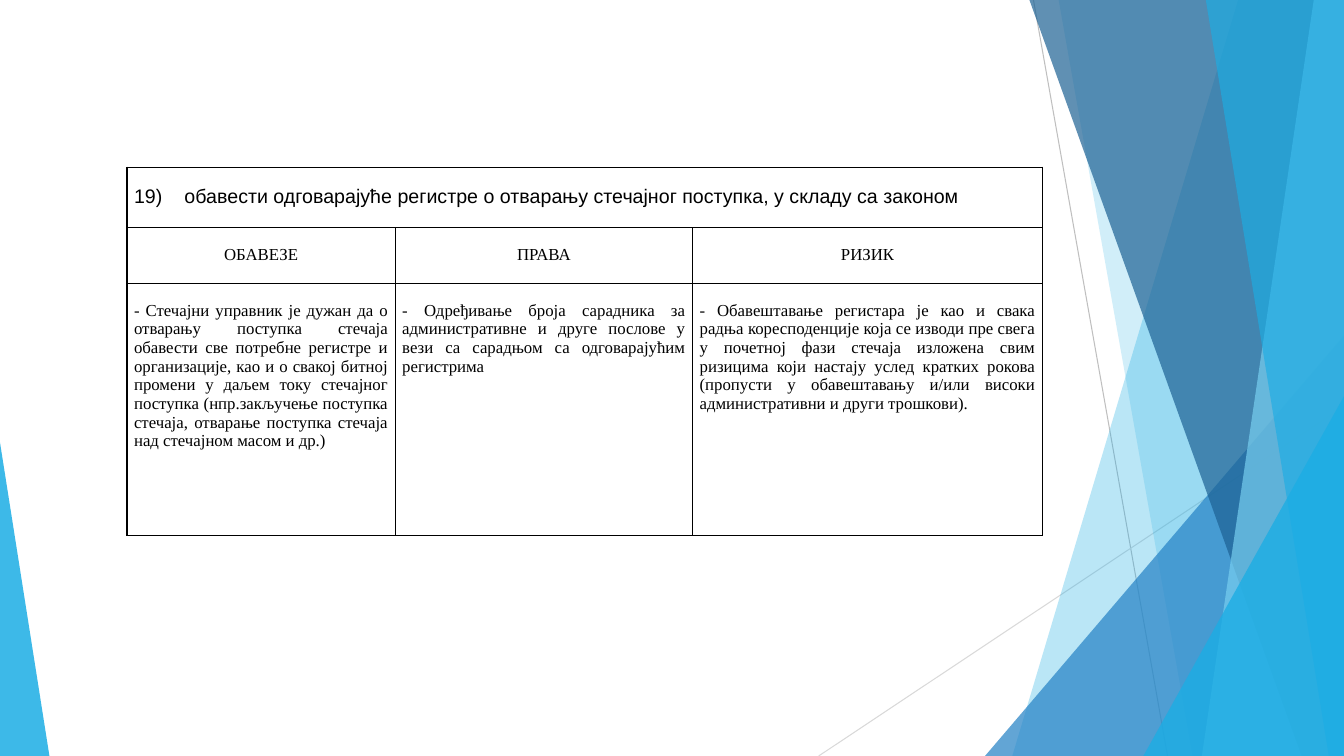
import pptx
import pptx.dml.color
import pptx.enum.shapes
import pptx.enum.text
import pptx.oxml
import pptx.oxml.ns
import pptx.util
from lxml import etree

Inches, Pt = pptx.util.Inches, pptx.util.Pt
RGB = pptx.dml.color.RGBColor.from_string
Align = pptx.enum.text.PP_ALIGN
qn = pptx.oxml.ns.qn

COLORS = {
    "sky": "1CADE4", "blue": "2683C6", "navy": "1D6294", "pale": "77CEEF",
    "gray": "BFBFBF", "light": "D9D9D9", "black": "000000",
}
WIDE, HIGH = 13.33, 7.5

deck = pptx.Presentation()
deck.slide_width, deck.slide_height = Inches(WIDE), Inches(HIGH)
slide = deck.slides.add_slide(deck.slide_layouts[6])
shapes = slide.shapes


def paint(shape, color, alpha):
    """Fill with a see-through colour; no line, no shadow."""
    shape.shadow.inherit = False
    shape.line.fill.background()
    shape.fill.solid()
    shape.fill.fore_color.rgb = RGB(COLORS[color])
    tint = shape.fill._xPr.find(".//" + qn("a:srgbClr"))
    etree.SubElement(tint, qn("a:alpha")).set("val", str(alpha * 1000))


# Thin lines
for x1, y1, x2, y2, color in [
    (10.25, 0, 11.58, HIGH, "gray"),
    (WIDE, 4.03, 8.12, HIGH, "light"),
]:
    line = shapes.add_connector(
        pptx.enum.shapes.MSO_CONNECTOR.STRAIGHT,
        Inches(x1), Inches(y1), Inches(x2), Inches(y2))
    line.line.color.rgb = RGB(COLORS[color])
    line.line.width = Pt(0.75)
    etree.SubElement(line._element.spPr, qn("a:effectLst"))

# Bands run to the right edge: top x, bottom x, colour, alpha
# Wedges stand on the bottom edge: left, top, width, tip, colour, alpha
for facet in [
    (12.28, 10.04, "sky", 30),
    (10.5, 11.83, "sky", 20),
    (9.77, 3.33, 3.56, 1, "blue", 72),
    (10.21, 12.91, "navy", 70),
    (13.03, 11.92, "pale", 70),
    (11.96, 13.18, "sky", 65),
    (11.34, 3.93, 1.99, 1, "sky", 80),
    (0, 4.39, 0.49, 0, "sky", 85),
]:
    *place, color, alpha = facet
    if len(place) == 2:
        top, base = place
        form = shapes.build_freeform(Inches(top), 0)
        form.add_line_segments([
            (Inches(x), Inches(y))
            for x, y in [(WIDE, 0), (WIDE, HIGH), (base, HIGH)]])
        shape = form.convert_to_shape()
    else:
        left, top, width, tip = place
        shape = shapes.add_shape(
            pptx.enum.shapes.MSO_SHAPE.ISOSCELES_TRIANGLE,
            Inches(left), Inches(top), Inches(width), Inches(HIGH - top))
        shape.adjustments[0] = tip
    paint(shape, color, alpha)

# Table
TITLE = "обавести одговарајуће регистре о отварању стечајног поступка, у складу са законом"
HEADS = ["ОБАВЕЗЕ", "ПРАВА", "РИЗИК"]
NOTES = [
    "- Стечајни управник је дужан да о отварању поступка стечаја обавести све "
    "потребне регистре и организације, као и о свакој битној промени у даљем току "
    "стечајног поступка (нпр.закључење поступка стечаја, отварање поступка стечаја "
    "над стечајном масом и др.)",
    "- Одређивање броја сарадника за административне и друге послове у вези са "
    "сарадњом са одговарајућим регистрима",
    "- Обавештавање регистара је као и свака радња коресподенције која се изводи "
    "пре свега у почетној фази стечаја изложена свим ризицима који настају услед "
    "кратких рокова (пропусти у обавештавању и/или високи административни и други "
    "трошкови).",
]
ROWS = [
    (0.6, [TITLE, "", ""], "Arial", 14, Align.LEFT),
    (0.55, HEADS, "Times New Roman", 12, Align.CENTER),
    (2.5, NOTES, "Times New Roman", 12, Align.JUSTIFY),
]
COLS = [2.66, 2.95, 3.47]

frame = shapes.add_table(
    len(ROWS), len(COLS), Inches(1.26), Inches(1.66),
    Inches(sum(COLS)), Inches(sum(row[0] for row in ROWS)))
table = frame.table
table.first_row = table.horz_banding = False
for col, width in zip(table.columns, COLS):
    col.width = Inches(width)

for r, (height, texts, font, size, align) in enumerate(ROWS):
    table.rows[r].height = Inches(height)
    for c, text in enumerate(texts):
        cell = table.cell(r, c)
        cell.margin_left = cell.margin_right = Inches(0.07)
        cell.margin_top, cell.margin_bottom = Inches(0.18), 0
        props = cell._tc.get_or_add_tcPr()
        for side in ["lnL", "lnR", "lnT", "lnB"]:
            edge = etree.SubElement(props, qn("a:" + side), w=str(Pt(1)))
            fill = etree.SubElement(edge, qn("a:solidFill"))
            etree.SubElement(fill, qn("a:srgbClr"), val=COLORS["black"])
        cell.fill.background()
        cell.text = text
        para = cell.text_frame.paragraphs[0]
        para.alignment = align
        if text == TITLE:
            props = para._p.get_or_add_pPr()
            props.set("marL", str(Inches(0.5)))
            props.set("indent", str(Inches(-0.5)))
            etree.SubElement(props, qn("a:buFont"), typeface=font)
            etree.SubElement(
                props, qn("a:buAutoNum"), type="arabicParenR", startAt="19")
        para.font.name = font
        para.font.size = Pt(size)
        para.font.color.rgb = RGB(COLORS["black"])
table.cell(0, 0).merge(table.cell(0, 2))

deck.save("out.pptx")
